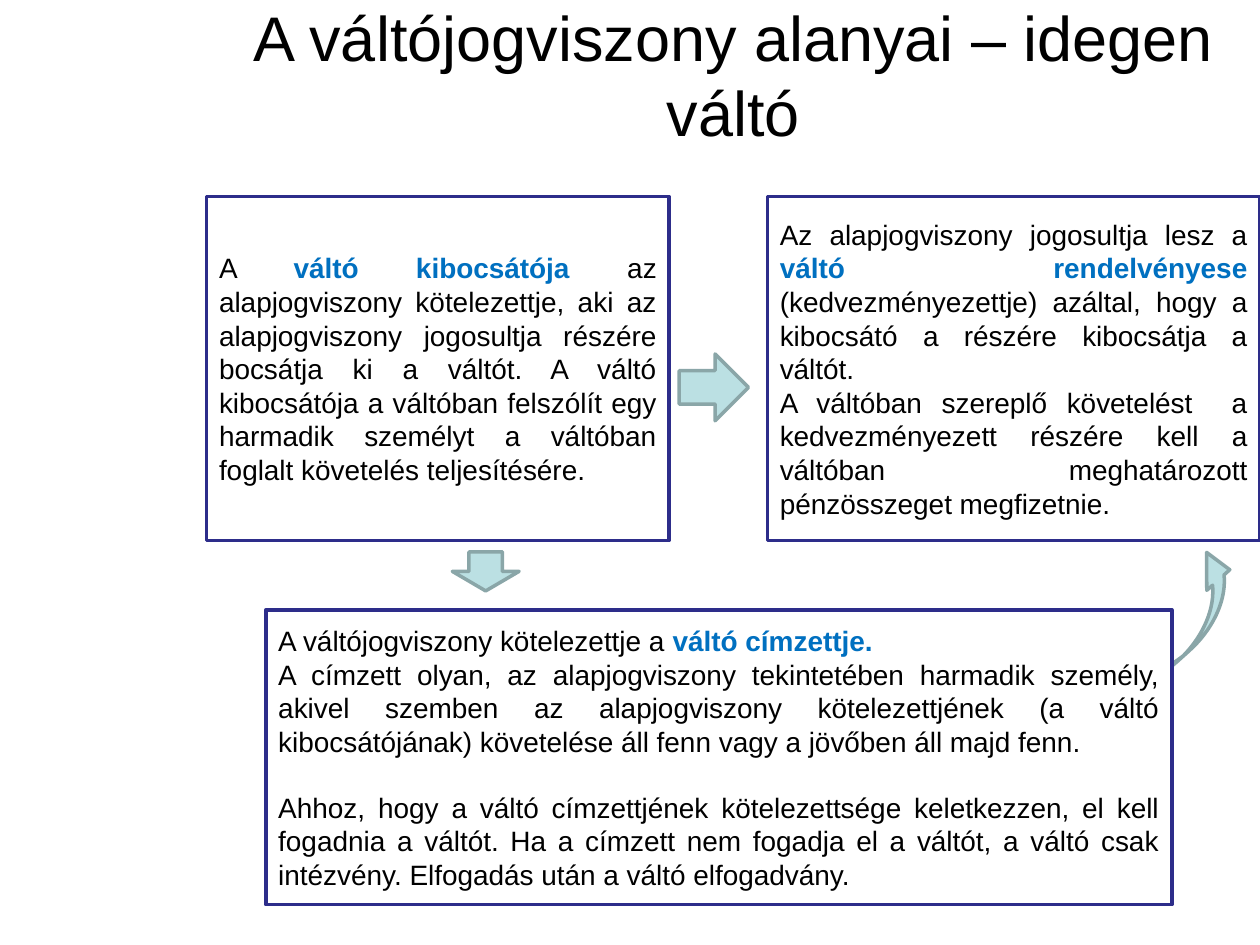
from pptx import Presentation
from pptx.dml.color import RGBColor
from pptx.enum import shapes, text
from pptx.util import Inches, Pt

COLORS = {
    "ink": "000000",
    "term": "0070C0",
    "paper": "FFFFFF",
    "frame": "2D2D8A",
    "arrow": "BBE0E3",
    "arrow_edge": "8AA6A8",
}
FONT = "Arial"
BODY_SIZE = 16
BLANK_LINE = Pt(18.4)
SHAPE = shapes.MSO_SHAPE

# Each paragraph is a list of (wording, is_term) spans.
DRAWER = [
    [("A ", False), ("váltó kibocsátója ", True),
     ("az alapjogviszony kötelezettje, aki az alapjogviszony jogosultja "
      "részére bocsátja ki a váltót. A váltó kibocsátója a váltóban felszólít "
      "egy harmadik személyt a váltóban foglalt követelés teljesítésére.", False)],
]
PAYEE = [
    [("Az alapjogviszony jogosultja lesz a ", False),
     ("váltó rendelvényese ", True),
     ("(kedvezményezettje) azáltal, hogy a kibocsátó a részére kibocsátja "
      "a váltót.", False)],
    [("A váltóban szereplő követelést  a kedvezményezett részére kell a "
      "váltóban meghatározott pénzösszeget megfizetnie.", False)],
]
DRAWEE = [
    [("A váltójogviszony kötelezettje a ", False), ("váltó címzettje.", True)],
    [("A címzett olyan, az alapjogviszony tekintetében harmadik személy, "
      "akivel szemben az alapjogviszony kötelezettjének (a váltó "
      "kibocsátójának) követelése áll fenn vagy a jövőben áll majd fenn.", False)],
    [("Ahhoz, hogy a váltó címzettjének kötelezettsége keletkezzen, el kell "
      "fogadnia a váltót. Ha a címzett nem fogadja el a váltót, a váltó csak "
      "intézvény. Elfogadás után a váltó elfogadvány.", False)],
]


def rgb(name):
    return RGBColor.from_string(COLORS[name])


def set_all(target, values):
    for name, value in values.items():
        setattr(target, name, value)


def add_span(para, wording, size, color="ink", bold=False):
    span = para.add_run()
    span.text = wording
    set_all(span.font, {"name": FONT, "size": Pt(size), "bold": bold})
    span.font.color.rgb = rgb(color)


def add_figure(page, kind, place, fill, edge):
    figure = page.shapes.add_shape(kind, *map(Inches, place))
    figure.shadow.inherit = False
    figure.fill.solid()
    figure.fill.fore_color.rgb = rgb(fill)
    figure.line.color.rgb = rgb(edge)
    figure.line.width = Pt(2)
    return figure


def add_arrow(page, kind, place):
    return add_figure(page, kind, place, "arrow", "arrow_edge")


def add_title(page, place, wording):
    box = page.shapes.add_textbox(*map(Inches, place))
    set_all(box.text_frame, {"word_wrap": True,
                             "vertical_anchor": text.MSO_ANCHOR.MIDDLE})
    para = box.text_frame.paragraphs[0]
    para.alignment = text.PP_ALIGN.CENTER
    add_span(para, wording, 36)


def add_party(page, place, paragraphs, gap_before=None):
    """Framed box for one party; gap_before is the paragraph set off by a line."""
    box = add_figure(page, SHAPE.RECTANGLE, place, "paper", "frame")
    frame = box.text_frame
    set_all(frame, {"word_wrap": True,
                    "vertical_anchor": text.MSO_ANCHOR.MIDDLE})
    for index, spans in enumerate(paragraphs):
        para = frame.add_paragraph() if index else frame.paragraphs[0]
        para.alignment = text.PP_ALIGN.JUSTIFY
        if index == gap_before:
            para.space_before = BLANK_LINE
        for wording, is_term in spans:
            add_span(para, wording, BODY_SIZE,
                     "term" if is_term else "ink", is_term)


def main():
    deck = Presentation()
    set_all(deck, {"slide_width": Inches(10), "slide_height": Inches(7.5)})
    page = deck.slides.add_slide(deck.slide_layouts[6])

    payment = add_arrow(page, SHAPE.CURVED_UP_ARROW, (8.47, 4.76, 1.56, 0.49))
    payment.rotation = 318.2
    payment.adjustments[2] = 0.46

    add_title(page, (1.64, 0, 8.36, 1.17),
              "A váltójogviszony alanyai – idegen váltó")
    add_party(page, (1.64, 1.56, 3.67, 2.73), DRAWER)
    add_party(page, (6.09, 1.56, 3.91, 2.73), PAYEE)
    add_party(page, (2.11, 4.84, 7.19, 2.34), DRAWEE, gap_before=2)
    add_arrow(page, SHAPE.RIGHT_ARROW, (5.39, 2.81, 0.55, 0.53))
    add_arrow(page, SHAPE.DOWN_ARROW, (3.59, 4.38, 0.53, 0.31))

    deck.save("out.pptx")


if __name__ == "__main__":
    main()
